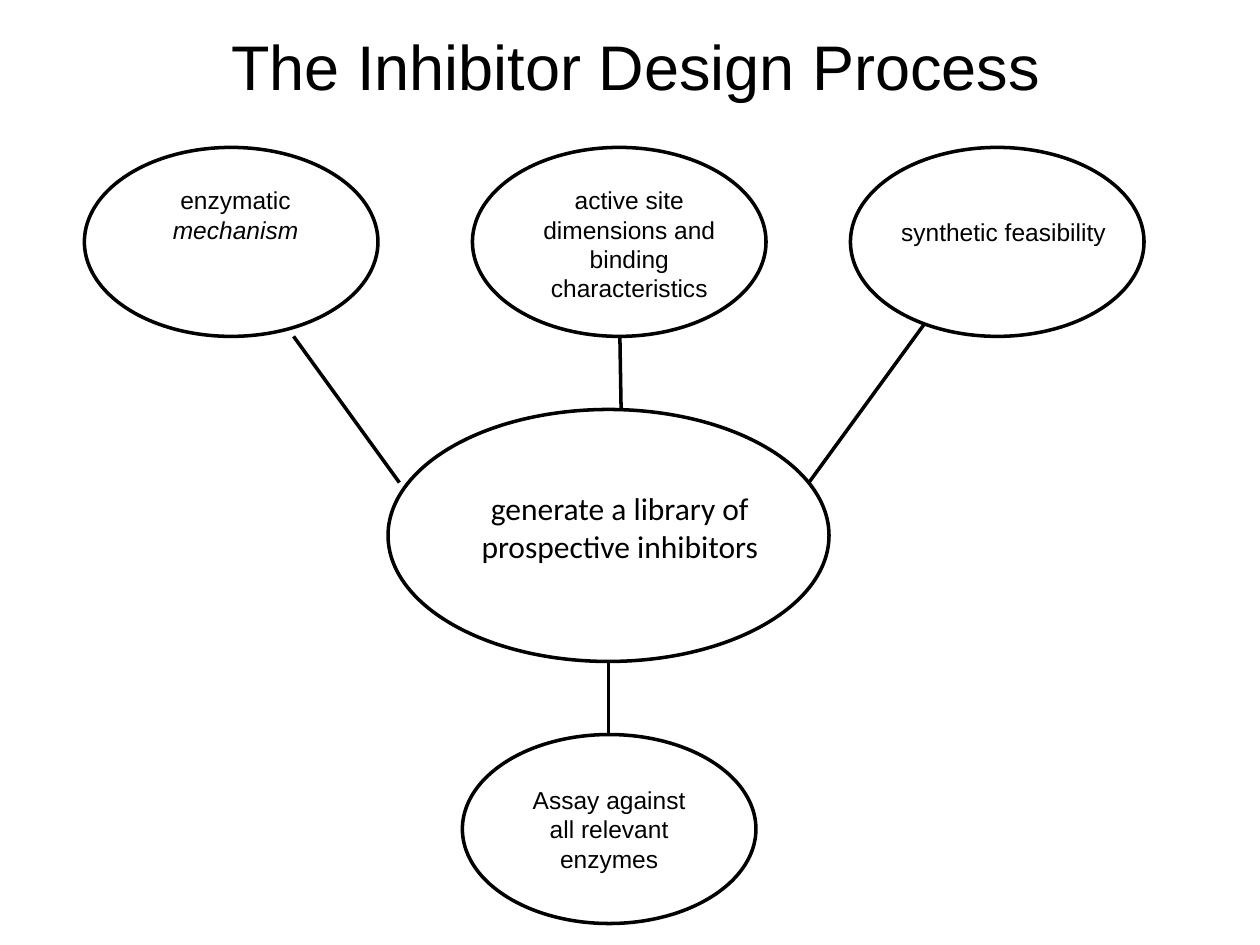
from lxml import etree
from pptx import Presentation
from pptx.dml.color import RGBColor
from pptx.enum.shapes import MSO_CONNECTOR, MSO_SHAPE
from pptx.enum.text import MSO_ANCHOR, MSO_AUTO_SIZE, PP_ALIGN
from pptx.oxml.ns import qn
from pptx.util import Inches, Pt

ELLIPSE = MSO_SHAPE.OVAL
STRAIGHT = MSO_CONNECTOR.STRAIGHT
CENTER = PP_ALIGN.CENTER
TOP, MIDDLE = MSO_ANCHOR.TOP, MSO_ANCHOR.MIDDLE
GROW = MSO_AUTO_SIZE.SHAPE_TO_FIT_TEXT
TITLE_ONLY = 5

SMALL = (2.33, 1.5)
LARGE = (3.5, 2)


def rgb(value):
    return RGBColor.from_string(value)


class Diagram:
    """Holds the slide and its black-on-white outline style."""
    ink, paper = "000000", "FFFFFF"
    line_width = Pt(2)

    def __init__(self, slide):
        self.s = slide

    def outline(self, line):
        line.color.rgb = rgb(self.ink)
        line.width = self.line_width

    def set_text(self, sp, paragraphs, size, font="Arial", anchor=TOP):
        """Each paragraph is a list of (text, italic) runs."""
        tf = sp.text_frame
        tf.word_wrap = True
        tf.vertical_anchor = anchor
        for i, runs in enumerate(paragraphs):
            p = tf.paragraphs[0] if i == 0 else tf.add_paragraph()
            p.alignment = CENTER
            p.font.size, p.font.name = Pt(size), font
            p.font.color.rgb = rgb(self.ink)
            for text, italic in runs:
                r = p.add_run()
                r.text = text
                if italic:
                    r.font.italic = True

    def title(self, text, x, y, w, h):
        sp = self.s.shapes.title
        sp.left, sp.top, sp.width, sp.height = map(Inches, (x, y, w, h))
        self.set_text(sp, [[(text, False)]], 36)
        sp.text_frame.auto_size = GROW

    def ellipse(self, x, y, size, lines=()):
        sp = self.s.shapes.add_shape(ELLIPSE, *map(Inches, (x, y, *size)))
        sp.shadow.inherit = False
        sp.fill.solid()
        sp.fill.fore_color.rgb = rgb(self.paper)
        self.outline(sp.line)
        self.set_text(sp, [[(line, False)] for line in lines], 14, anchor=MIDDLE)

    def label(self, x, y, w, h, *runs, size=14, font="Arial"):
        sp = self.s.shapes.add_textbox(*map(Inches, (x, y, w, h)))
        self.set_text(sp, [runs], size, font)
        sp.text_frame.auto_size = GROW

    def link(self, start, end):
        cx = self.s.shapes.add_connector(STRAIGHT, *map(Inches, (*start, *end)))
        self.outline(cx.line)
        etree.SubElement(cx._element.spPr, qn("a:effectLst"))


def main():
    prs = Presentation()
    prs.slide_width, prs.slide_height = Inches(10), Inches(7.5)
    d = Diagram(prs.slides.add_slide(prs.slide_layouts[TITLE_ONLY]))
    d.title("The Inhibitor Design Process", 1.17, 0.17, 7.75, 0.71)

    # Three inputs along the top
    for x in (0.67, 3.75, 6.75):
        d.ellipse(x, 1.17, SMALL)
    d.label(0.83, 1.42, 2.08, 0.57, ("enzymatic ", False), ("mechanism", True))
    d.label(4.08, 1.42, 1.83, 1.04,
            ("active site dimensions and binding characteristics", False))
    d.label(7, 1.67, 1.93, 0.34, ("synthetic feasibility", False))

    # Links from the inputs to the library
    for start, end in (((2.33, 2.67), (3.17, 3.83)),
                       ((4.92, 2.67), (4.93, 3.28)),
                       ((7.33, 2.58), (6.42, 3.83))):
        d.link(start, end)

    # Library, then the assay below it
    d.ellipse(3.08, 3.25, LARGE)
    d.label(3.42, 3.83, 3, 0.71,
            ("generate a library of prospective inhibitors", False),
            size=18, font="Calibri")
    d.link((4.83, 5.25), (4.83, 5.83))
    d.ellipse(3.67, 5.83, SMALL, ("Assay against", "all relevant enzymes"))

    prs.save("out.pptx")


if __name__ == "__main__":
    main()
